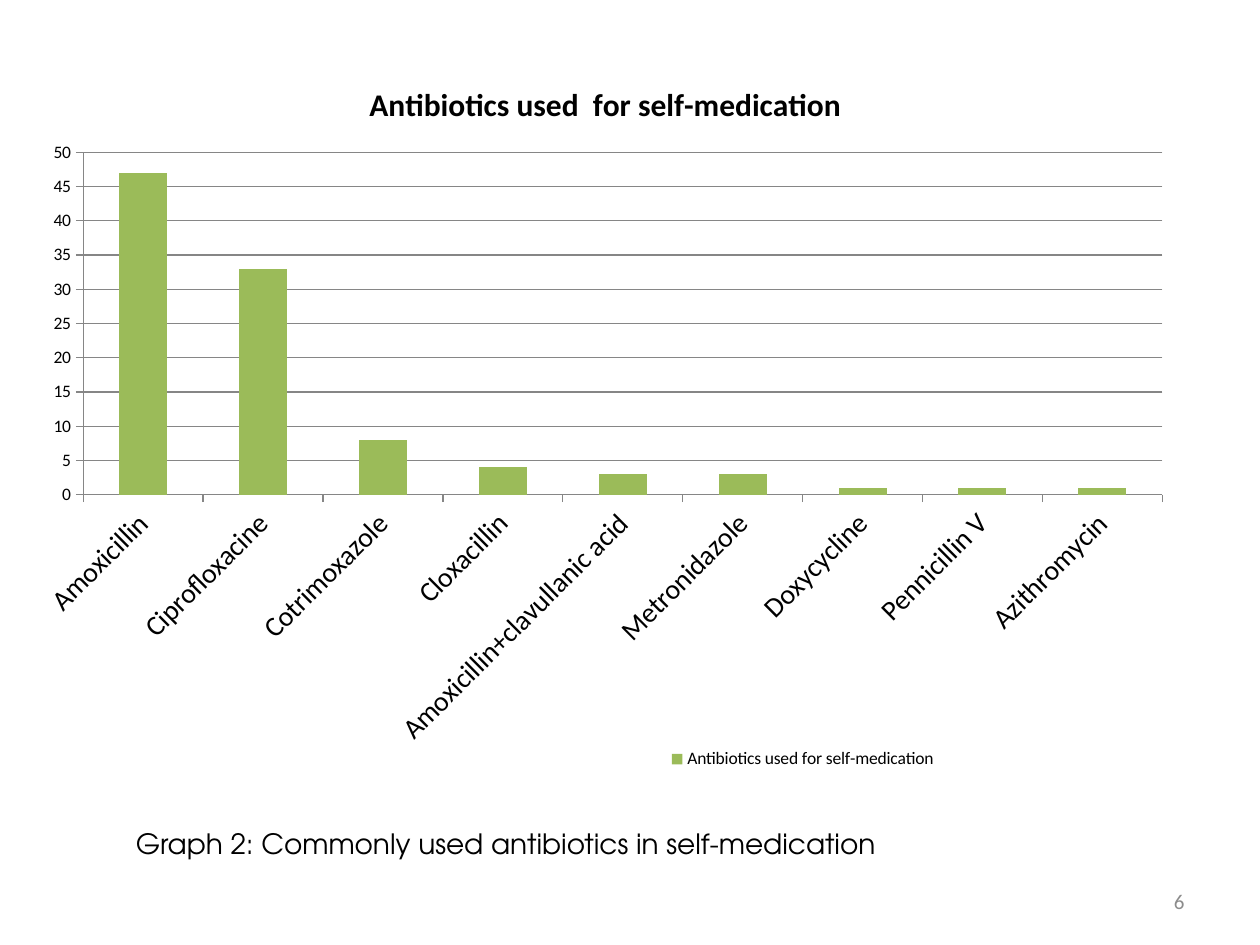
from lxml import etree
from pptx import Presentation
from pptx.chart.data import CategoryChartData
from pptx.dml.color import RGBColor
from pptx.enum import chart as ch, text
from pptx.oxml import ns
from pptx.util import Inches, Pt

COLORS = {"text": "000000", "number": "8C8C8C", "bar": "9BBB59", "axis": "868686"}
TITLE = "Antibiotics used  for self-medication"
SERIES = "Antibiotics used for self-medication"
USE = [
    ("Amoxicillin", 47),
    ("Ciprofloxacine", 33),
    ("Cotrimoxazole", 8),
    ("Cloxacillin", 4),
    ("Amoxicillin+clavullanic acid", 3),
    ("Metronidazole", 3),
    ("Doxycycline", 1),
    ("Pennicillin V", 1),
    ("Azithromycin", 1),
]
LABELS = [
    ("Graph 2: Commonly used antibiotics in self-medication", (0.98, 6.51, 7.8, 0.37),
     "TeX Gyre Adventor", 16, "text", text.PP_ALIGN.LEFT, text.MSO_ANCHOR.TOP),
    ("6", (7.17, 6.95, 2.33, 0.4),
     "Calibri", 12, "number", text.PP_ALIGN.RIGHT, text.MSO_ANCHOR.MIDDLE),
]
CHART_BOX = (0.2, 0.44, 9.21, 5.91)
PLOT_LAYOUT = {"layoutTarget": "inner", "xMode": "edge", "yMode": "edge",
               "x": 0.05, "y": 0.13, "w": 0.93, "h": 0.46}
LEGEND_LAYOUT = {"xMode": "edge", "yMode": "edge", "x": 0.55, "y": 0.92, "w": 0.24, "h": 0.05}


def rgb(name):
    return RGBColor.from_string(COLORS[name])


def style_font(font, size, name="Calibri", color="text", bold=False):
    font.name, font.size, font.bold = name, Pt(size), bold
    font.color.rgb = rgb(color)


def set_layout(parent, values, index):
    for old in parent.findall(ns.qn("c:layout")):
        parent.remove(old)
    layout = etree.Element(ns.qn("c:layout"))
    manual = etree.SubElement(layout, ns.qn("c:manualLayout"))
    for key, value in values.items():
        etree.SubElement(manual, ns.qn("c:" + key)).set("val", str(value))
    parent.insert(index, layout)


def add_label(s, words, box, name, size, color, align, anchor):
    tf = s.shapes.add_textbox(*map(Inches, box)).text_frame
    tf.word_wrap, tf.vertical_anchor = True, anchor
    p = tf.paragraphs[0]
    p.text, p.alignment = words, align
    style_font(p.font, size, name, color)


def add_usage_chart(s):
    data = CategoryChartData()
    data.categories = [drug for drug, _ in USE]
    data.add_series(SERIES, [share for _, share in USE])
    chart = s.shapes.add_chart(ch.XL_CHART_TYPE.COLUMN_STACKED,
                               *map(Inches, CHART_BOX), data).chart
    style_font(chart.font, 10)
    chart.has_title = True
    p = chart.chart_title.text_frame.paragraphs[0]
    p.text = TITLE
    style_font(p.font, 18, bold=True)
    chart.chart_title.include_in_layout = False

    plot = chart.plots[0]
    plot.gap_width, plot.overlap, plot.vary_by_categories = 150, 100, False
    fill = plot.series[0].format.fill
    fill.solid()
    fill.fore_color.rgb = rgb("bar")

    values, drugs = chart.value_axis, chart.category_axis
    values.minimum_scale, values.maximum_scale, values.major_unit = 0, 50, 5
    values.has_major_gridlines = True
    for axis, size in ((values, 10), (drugs, 16)):
        axis.major_tick_mark = ch.XL_TICK_MARK.OUTSIDE
        style_font(axis.tick_labels.font, size)
    for part in (values, drugs, values.major_gridlines):
        part.format.line.color.rgb = rgb("axis")
        part.format.line.width = Pt(0.75)
    drugs.tick_labels.font
    body = drugs._element.find(ns.qn("c:txPr")).find(ns.qn("a:bodyPr"))
    body.set("rot", "-2700000")
    body.set("vert", "horz")

    chart.has_legend = True
    chart.legend.position = ch.XL_LEGEND_POSITION.BOTTOM
    chart.legend.include_in_layout = False
    style_font(chart.legend.font, 10)
    set_layout(chart.legend._element, LEGEND_LAYOUT, 1)
    set_layout(chart._chartSpace.chart.plotArea, PLOT_LAYOUT, 0)


def main():
    """Build the slide on antibiotics used for self-medication."""
    prs = Presentation()
    prs.slide_width, prs.slide_height = Inches(10), Inches(7.5)
    s = prs.slides.add_slide(prs.slide_layouts[6])
    for label in LABELS:
        add_label(s, *label)
    add_usage_chart(s)
    prs.save("out.pptx")


if __name__ == "__main__":
    main()
